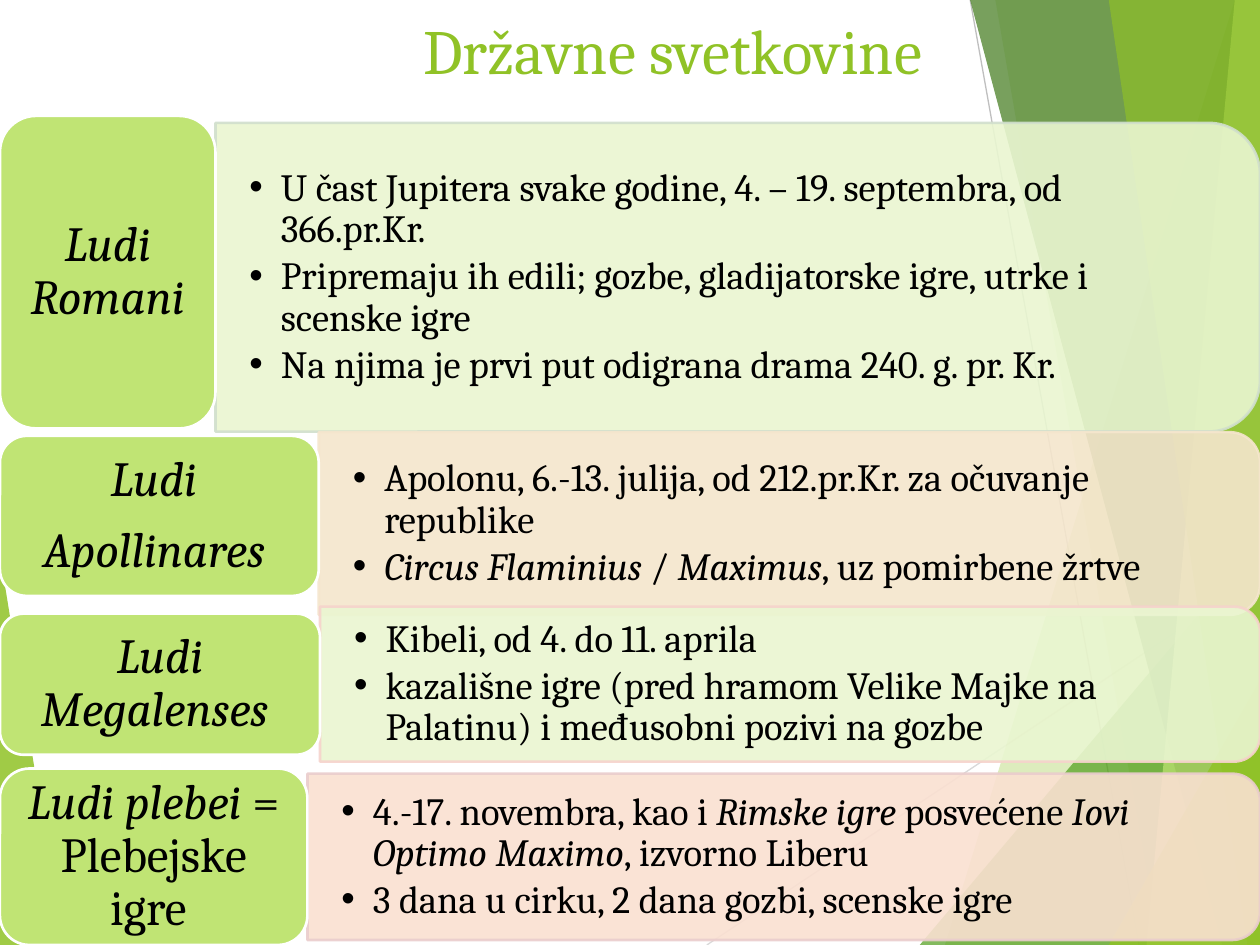
from lxml import etree
from pptx import Presentation
from pptx.dml.color import RGBColor
from pptx.enum.shapes import MSO_CONNECTOR, MSO_SHAPE
from pptx.enum.text import MSO_ANCHOR, PP_ALIGN
from pptx.oxml.ns import qn
from pptx.util import Inches, Pt

ROUND_RECT = MSO_SHAPE.ROUNDED_RECTANGLE
ROUND_TOP = MSO_SHAPE.ROUND_2_SAME_RECTANGLE
STRAIGHT = MSO_CONNECTOR.STRAIGHT
MIDDLE = MSO_ANCHOR.MIDDLE
CENTER, LEFT = PP_ALIGN.CENTER, PP_ALIGN.LEFT

THEME = {
    "font": "Cambria", "title_size": 36, "label_size": 28, "body_size": 22,
    "green": "90C226", "leaf": "54A021", "forest": "3F7819", "lime": "C0E474",
    "text": "000000", "white": "FFFFFF",
}

prs = Presentation()
prs.slide_width, prs.slide_height = Inches(10), Inches(7.5)
slide = prs.slides.add_slide(prs.slide_layouts[6])
shapes = slide.shapes

# Grid of 100 columns by 75 rows, in square cells
CELL = prs.slide_width // 100


def paint(shape, fill, fill_alpha=100, line=None, line_alpha=100):
    """Colour a shape's fill and outline, with opacity in percent."""
    shape.shadow.inherit = False
    shape.fill.solid()
    shape.fill.fore_color.rgb = RGBColor.from_string(fill)
    if line:
        shape.line.color.rgb = RGBColor.from_string(line)
        shape.line.width = Pt(1.5)
    else:
        shape.line.fill.background()
    opacities = [fill_alpha, line_alpha]
    for color, opacity in zip(shape.element.spPr.iter(qn("a:srgbClr")), opacities):
        if opacity < 100:
            etree.SubElement(color, qn("a:alpha"), val=str(opacity * 1000))


def write(shape, paragraphs, size, color, align, margins=(0, 0),
          line_spacing=1, space_after=0, bullet=False):
    """Fill a shape with text; asterisks switch italics on and off."""
    frame = shape.text_frame
    side, edge = (round(margin * CELL) for margin in margins)
    frame_format = {"word_wrap": True, "vertical_anchor": MIDDLE,
                    "margin_left": side, "margin_right": side,
                    "margin_top": edge, "margin_bottom": edge}
    for key, value in frame_format.items():
        setattr(frame, key, value)
    paragraph_format = {"alignment": align, "line_spacing": line_spacing,
                        "space_after": Pt(space_after)}
    for index, content in enumerate(paragraphs):
        paragraph = frame.add_paragraph() if index else frame.paragraphs[0]
        for key, value in paragraph_format.items():
            setattr(paragraph, key, value)
        if bullet:
            props = paragraph._p.get_or_add_pPr()
            indent = round(2.5 * CELL)
            props.set("marL", str(indent))
            props.set("indent", str(-indent))
            etree.SubElement(props, qn("a:buFont"), typeface="Arial")
            etree.SubElement(props, qn("a:buChar"), char="•")
        for part, words in enumerate(content.split("*")):
            if not words:
                continue
            run = paragraph.add_run()
            run.text = words
            run_format = {"name": THEME["font"], "size": Pt(size), "italic": part % 2 == 1}
            for key, value in run_format.items():
                setattr(run.font, key, value)
            run.font.color.rgb = RGBColor.from_string(color)


# Background: thin lines and translucent facets, from back to front
left_facet = ("green", 85, [(0, 43.9), (4.9, 75), (0, 75)])
right_facets = [
    ("green", 30, [(97.5, 0), (75.4, 75), (100, 75), (100, 0)]),
    ("green", 20, [(78.8, 0), (91.9, 75), (100, 75), (100, 0)]),
    ("leaf", 72, [(72.6, 75), (100, 42.9), (100, 75)]),
    ("forest", 70, [(76.7, 0), (97, 75), (100, 75), (100, 0)]),
    ("lime", 70, [(98.1, 0), (90.7, 75), (100, 75), (100, 0)]),
    ("green", 65, [(88.3, 0), (98.6, 75), (100, 75), (99.8, 0)]),
    ("green", 80, [(88.1, 75), (100, 53.5), (100, 75)]),
]
thin_lines = [("D9D9D9", (56.1, 75, 100, 45.7)), ("BFBFBF", (77, 0, 90.4, 75))]

for color, ends in thin_lines:
    thin_line = shapes.add_connector(STRAIGHT, *(round(end * CELL) for end in ends))
    thin_line.line.color.rgb = RGBColor.from_string(color)
    thin_line.line.width = Pt(0.75)
    etree.SubElement(thin_line.element.spPr, qn("a:effectLst"))

for color, opacity, corners in [left_facet, *right_facets]:
    outline = shapes.build_freeform(*corners[0], scale=CELL)
    outline.add_line_segments(corners[1:], close=True)
    paint(outline.convert_to_shape(), THEME[color], opacity)

# Title
title = shapes.add_textbox(*(round(n * CELL) for n in (11.6, 0, 83.6, 7.8)))
write(title, ["Državne svetkovine"], THEME["title_size"], THEME["green"], CENTER)

# Festivals: label (top, width, height), panel (top, height, fill, line), texts
festivals = [
    ((9.2, 17.1, 24.8), (9.75, 24.5, "EAF6D1", "D1DFCD"),
     ["*Ludi Romani *"],
     ["U čast Jupitera svake godine, 4. – 19. septembra, od 366.pr.Kr.",
      "Pripremaju ih edili; gozbe, gladijatorske igre, utrke i scenske igre",
      "Na njima je prvi put odigrana drama 240. g. pr. Kr."]),
    ((34.6, 25.3, 12.7), (34.3, 14.5, "F5E6CD", "F5E6CD"),
     ["*Ludi *", "*Apollinares *"],
     ["Apolonu, 6.-13. julija, od 212.pr.Kr. za očuvanje republike",
      "*Circus Flaminius* / *Maximus*, uz pomirbene žrtve"]),
    ((48.7, 25.4, 11.2), (48.15, 12.3, "EAF6D1", "F6D3CC"),
     ["*Ludi Megalenses *"],
     ["Kibeli, od 4. do 11. aprila",
      "kazališne igre (pred hramom Velike Majke na Palatinu) i međusobni pozivi na gozbe"]),
    ((61, 24.4, 14), (61.4, 13.2, "FAE0D1", "EACDCD"),
     ["*Ludi plebei *= Plebejske igre "],
     ["4.-17. novembra, kao i *Rimske igre* posvećene *Iovi Optimo Maximo*, izvorno Liberu",
      "3 dana u cirku, 2 dana gozbi, scenske igre"]),
]
CORNER = 0.05  # share of the panel height that the rounded corners take from the text

for label_box, panel_box, name, facts in festivals:
    label_top, label_width, label_height = label_box
    top, height, fill, line = panel_box
    width = 100 - label_width

    # Panel is turned a quarter so that its rounded corners face right
    turned = (label_width + (width - height) / 2, top + (height - width) / 2, height, width)
    panel = shapes.add_shape(ROUND_TOP, *(round(n * CELL) for n in turned))
    panel.rotation = 90
    paint(panel, fill, 90, line, 90)

    inner = (label_width, top + CORNER * height,
             width - CORNER * height, height * (1 - 2 * CORNER))
    details = shapes.add_textbox(*(round(n * CELL) for n in inner))
    write(details, facts, THEME["body_size"], THEME["text"], LEFT, (2.7, 1.4),
          line_spacing=0.9, space_after=3, bullet=True)

    label = shapes.add_shape(
        ROUND_RECT, *(round(n * CELL) for n in (0, label_top, label_width, label_height)))
    paint(label, THEME["lime"], line=THEME["white"])
    write(label, name, THEME["label_size"], THEME["text"], CENTER, (1.2, 0.6),
          line_spacing=0.9, space_after=10)

prs.save("out.pptx")
